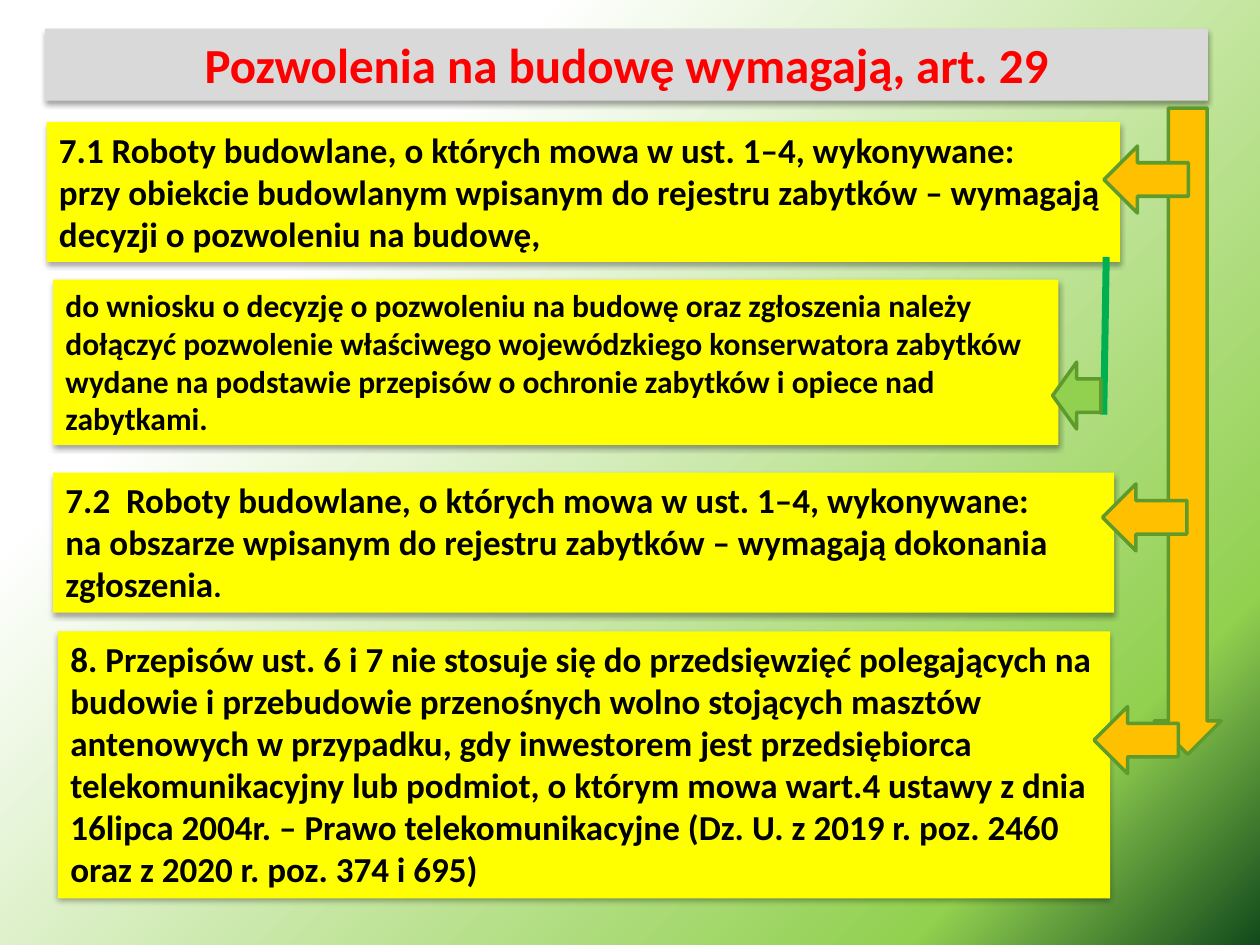
import pptx
import pptx.util
import pptx.dml.color
import pptx.enum.shapes
import pptx.enum.text
import pptx.oxml
import pptx.oxml.ns
from pptx.util import Cm, Pt

COLORS = {
    "title_fill": "D9D9D9", "title_text": "FF0000",
    "box": "FFFF00", "text": "000000",
    "orange": "FFC000", "green": "92D050", "outline": "5E9B2C",
    "link": "00B050", "dark": "124A1B", "white": "FFFFFF",
}
FONT = "Calibri"
NS = pptx.oxml.ns.nsdecls("a")
SHAPES = pptx.enum.shapes.MSO_SHAPE
ALIGN = pptx.enum.text.PP_ALIGN


def rgb(name):
    return pptx.dml.color.RGBColor.from_string(COLORS[name])


class Builder:
    def __init__(self, slide):
        self.slide = slide

    def background(self, stops):
        """Radial gradient centred on the bottom right corner."""
        self.slide.background.fill.solid()
        solid = self.slide.element.xpath("p:cSld/p:bg/p:bgPr/a:solidFill")[0]
        gs = "".join(
            f'<a:gs pos="{pos * 1000}"><a:srgbClr val="{COLORS[name]}"/></a:gs>'
            for pos, name in stops)
        grad = pptx.oxml.parse_xml(
            f'<a:gradFill {NS} rotWithShape="1"><a:gsLst>{gs}</a:gsLst>'
            '<a:path path="circle"><a:fillToRect l="100000" t="100000"/></a:path>'
            '</a:gradFill>')
        solid.getparent().replace(solid, grad)

    def shape(self, kind, x, y, w, h, fill):
        sp = self.slide.shapes.add_shape(kind, Cm(x), Cm(y), Cm(w), Cm(h))
        sp.shadow.inherit = False
        sp.fill.solid()
        sp.fill.fore_color.rgb = rgb(fill)
        return sp

    def box(self, x, y, w, h, text, size=20, fill="box", color="text", align=ALIGN.LEFT):
        sp = self.shape(SHAPES.RECTANGLE, x, y, w, h, fill)
        sp.line.fill.background()
        effects = sp.element.spPr.find(pptx.oxml.ns.qn("a:effectLst"))
        effects.append(pptx.oxml.parse_xml(
            f'<a:outerShdw {NS} blurRad="40000" dist="23000" dir="5400000" rotWithShape="0">'
            '<a:srgbClr val="000000"><a:alpha val="35000"/></a:srgbClr></a:outerShdw>'))
        tf = sp.text_frame
        tf.word_wrap = True
        tf.auto_size = pptx.enum.text.MSO_AUTO_SIZE.SHAPE_TO_FIT_TEXT
        tf.vertical_anchor = pptx.enum.text.MSO_ANCHOR.TOP
        p = tf.paragraphs[0]
        p.text = text
        p.alignment = align
        p.font.name = FONT
        p.font.size = Pt(size)
        p.font.bold = True
        p.font.color.rgb = rgb(color)
        return p

    def arrow(self, x, y, w, h, fill="orange", rotation=90, shaft=0.5):
        """Down arrow; a quarter turn makes it point left."""
        sp = self.shape(SHAPES.DOWN_ARROW, x, y, w, h, fill)
        sp.adjustments[0] = shaft
        sp.rotation = rotation
        sp.line.color.rgb = rgb("outline")
        sp.line.width = Pt(2)

    def line(self, x1, y1, x2, y2):
        cn = self.slide.shapes.add_connector(
            pptx.enum.shapes.MSO_CONNECTOR.STRAIGHT, Cm(x1), Cm(y1), Cm(x2), Cm(y2))
        cn.line.color.rgb = rgb("link")
        cn.line.width = Pt(4)
        cn.element.spPr.append(pptx.oxml.parse_xml(f"<a:effectLst {NS}/>"))


def main():
    prs = pptx.Presentation()
    prs.slide_width, prs.slide_height = Cm(25.4), Cm(19.05)
    s = Builder(prs.slides.add_slide(prs.slide_layouts[6]))
    s.background([(0, "dark"), (16, "green"), (75, "white")])

    s.box(0.91, 0.58, 23.44, 1.45, "Pozwolenia na budowę wymagają, art. 29",
          28, "title_fill", "title_text", ALIGN.CENTER)
    s.arrow(23.27, 2.18, 1.35, 13.03, rotation=0, shaft=0.58)

    works = "Roboty budowlane, o których mowa w ust. 1–4, wykonywane:\v"
    s.box(0.94, 2.46, 21.64, 2.82,
          f"7.1 {works}przy obiekcie budowlanym wpisanym do rejestru zabytków – "
          "wymagają decyzji o pozwoleniu na budowę,")
    p = s.box(1.07, 9.53, 21.39, 2.82,
              f"7.2  {works}na obszarze wpisanym do rejestru zabytków – "
              "wymagają dokonania zgłoszenia")
    r = p.add_run()
    r.text = "."
    r.font.size = Pt(18)
    s.box(1.07, 5.64, 20.27, 3.33,
          "do wniosku o decyzję o pozwoleniu na budowę oraz zgłoszenia należy "
          "dołączyć pozwolenie właściwego wojewódzkiego konserwatora zabytków "
          "wydane na podstawie przepisów o ochronie zabytków i opiece nad zabytkami.", 18)
    s.box(1.17, 12.73, 21.21, 5.38,
          "8. Przepisów ust. 6 i 7 nie stosuje się do przedsięwzięć polegających na "
          "budowie i przebudowie przenośnych wolno stojących masztów antenowych w "
          "przypadku, gdy inwestorem jest przedsiębiorca telekomunikacyjny lub podmiot, "
          "o którym mowa wart.4 ustawy z dnia 16lipca 2004r. – Prawo telekomunikacyjne "
          "(Dz. U. z 2019 r. poz. 2460 oraz z 2020 r. poz. 374 i 695)")

    s.line(22.3, 5.18, 22.25, 8.36)
    s.arrow(21.03, 7.49, 1.35, 0.97, "green")
    for x, y in [(22.43, 2.77), (22.4, 9.58), (22.23, 14.07)]:
        s.arrow(x, y, 1.35, 1.7)

    prs.save("out.pptx")


if __name__ == "__main__":
    main()
